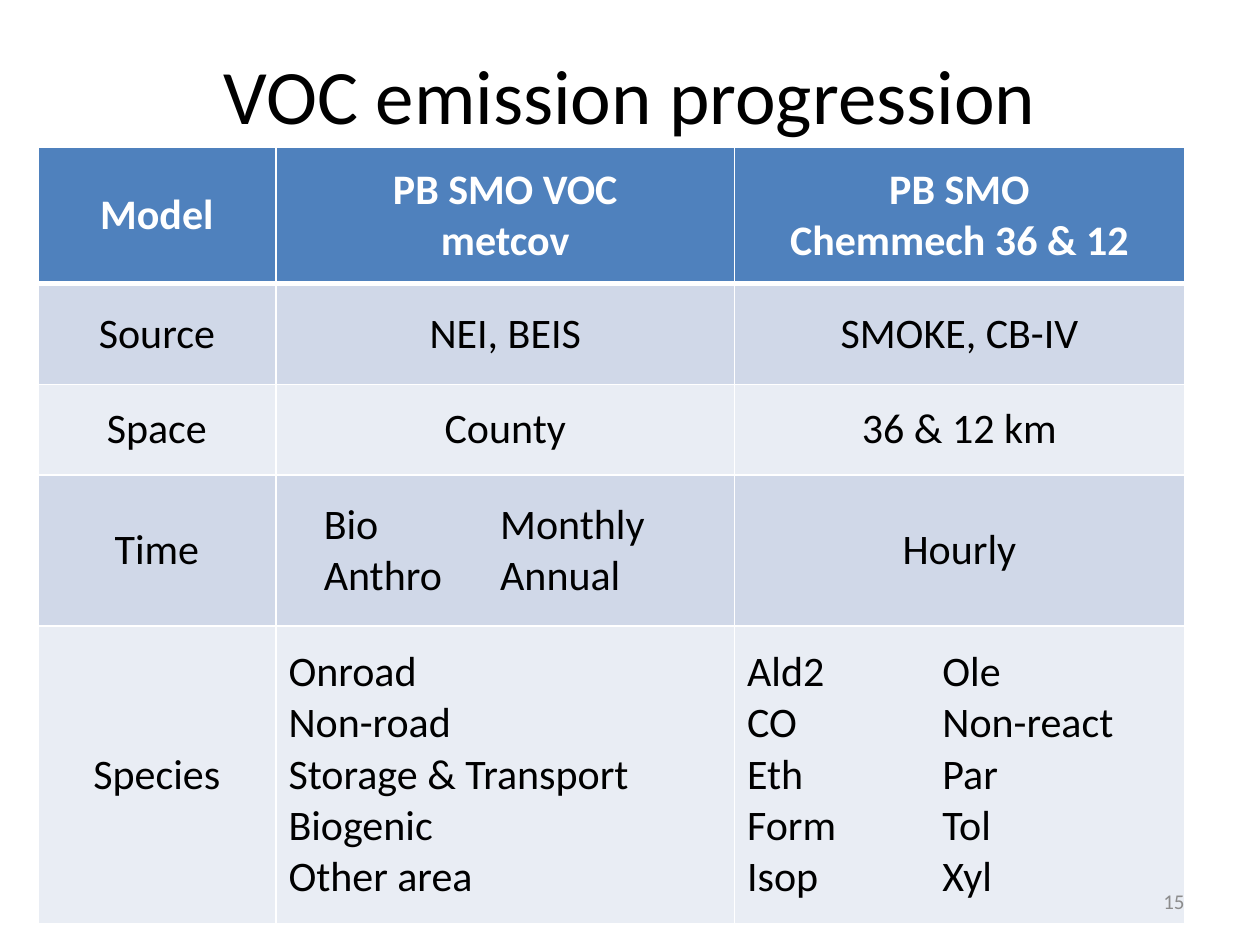
from lxml.etree import SubElement
from pptx import Presentation
from pptx.dml.color import RGBColor
from pptx.enum.text import MSO_ANCHOR as Anchor, MSO_AUTO_SIZE as AutoSize, PP_ALIGN as Align
from pptx.oxml.ns import qn
from pptx.util import Inches, Pt

FONT = "Calibri"
COLORS = {
    "white": "FFFFFF", "black": "000000", "grey": "8C8C8C",
    "header": "4F81BD", "band_dark": "D0D8E8", "band_light": "E9EDF4",
}
WIDTH, HEIGHT = Inches(10), Inches(7.5)
COLUMNS = [1.89, 3.64, 3.57]
ROWS = [1.08, 0.8, 0.72, 1.2, 2.36]
CELLS = [
    ["Model", "PB SMO VOC\nmetcov", "PB SMO\nChemmech 36 & 12"],
    ["Source", "NEI, BEIS", "SMOKE, CB-IV"],
    ["Space", "County", "36 & 12 km"],
    ["Time", "Bio\tMonthly\nAnthro\tAnnual", "Hourly"],
    ["Species",
     "Onroad\nNon-road\nStorage & Transport\nBiogenic\nOther area",
     "Ald2\tOle\nCO\tNon-react\nEth\tPar\nForm\tTol\nIsop\tXyl"],
]
# (row, column) of the left-aligned cells: left margin and tab stop in inches
LISTS = {(3, 1): (0.38, 1.4), (4, 1): (0.1, None), (4, 2): (0.1, 1.55)}


def rgb(name):
    return RGBColor.from_string(COLORS[name])


def share(left, top, width, height):
    """Turn shares of the slide's size into lengths."""
    return int(left * WIDTH), int(top * HEIGHT), int(width * WIDTH), int(height * HEIGHT)


def format_text(frame, size, color, align, bold=False):
    for paragraph in frame.paragraphs:
        paragraph.alignment = align
        font = paragraph.font
        font.name, font.size, font.bold = FONT, Pt(size), bold
        font.color.rgb = rgb(color)


def add_tab_stop(paragraph, position):
    tabs = SubElement(paragraph._p.get_or_add_pPr(), qn("a:tabLst"))
    # Tab stops precede the default run properties in the schema.
    tabs.getparent().insert(0, tabs)
    SubElement(tabs, qn("a:tab"), pos=str(Inches(position)), algn="l")


def add_borders(cell, top, bottom):
    """Draw white borders; must run before the fill is set."""
    properties = cell._tc.get_or_add_tcPr()
    for side, width in (("L", 1), ("R", 1), ("T", top), ("B", bottom)):
        line = SubElement(properties, qn(f"a:ln{side}"), w=str(Pt(width)))
        fill = SubElement(line, qn("a:solidFill"))
        SubElement(fill, qn("a:srgbClr"), val=COLORS["white"])


def fill_cell(cell, row, column):
    header = row == 0
    add_borders(cell, top=3 if row == 1 else 1, bottom=3 if header else 1)
    band = "header" if header else "band_dark" if row % 2 else "band_light"
    cell.fill.solid()
    cell.fill.fore_color.rgb = rgb(band)
    cell.vertical_anchor = Anchor.MIDDLE
    cell.text = CELLS[row][column]
    align = Align.LEFT if (row, column) in LISTS else Align.CENTER
    format_text(cell.text_frame, 24, "white" if header else "black", align, bold=header)
    if (row, column) in LISTS:
        margin, tab = LISTS[row, column]
        cell.margin_left = Inches(margin)
        if tab:
            for paragraph in cell.text_frame.paragraphs:
                add_tab_stop(paragraph, tab)


def add_emission_table(slide):
    table = slide.shapes.add_table(
        len(ROWS), len(COLUMNS), Inches(0.3), Inches(1.17),
        Inches(sum(COLUMNS)), Inches(sum(ROWS))).table
    for column, width in zip(table.columns, COLUMNS):
        column.width = Inches(width)
    for row, height in zip(table.rows, ROWS):
        row.height = Inches(height)
    for row in range(len(ROWS)):
        for column in range(len(COLUMNS)):
            fill_cell(table.cell(row, column), row, column)


def set_title(slide, text):
    title = slide.shapes.title
    title.left, title.top, title.width, title.height = share(0.16, 0.044, 0.68, 0.112)
    frame = title.text_frame
    frame.text = text
    frame.auto_size = AutoSize.NONE
    frame.vertical_anchor = Anchor.TOP
    format_text(frame, 44, "black", Align.CENTER)


def add_page_number(slide, number):
    frame = slide.shapes.add_textbox(*share(0.72, 0.927, 0.23, 0.053)).text_frame
    frame.text = str(number)
    frame.word_wrap = True
    frame.vertical_anchor = Anchor.MIDDLE
    format_text(frame, 12, "grey", Align.RIGHT)


def main():
    presentation = Presentation()
    presentation.slide_width, presentation.slide_height = WIDTH, HEIGHT
    slide = presentation.slides.add_slide(presentation.slide_layouts[5])
    set_title(slide, "VOC emission progression")
    add_emission_table(slide)
    add_page_number(slide, 15)
    presentation.save("out.pptx")


if __name__ == "__main__":
    main()
